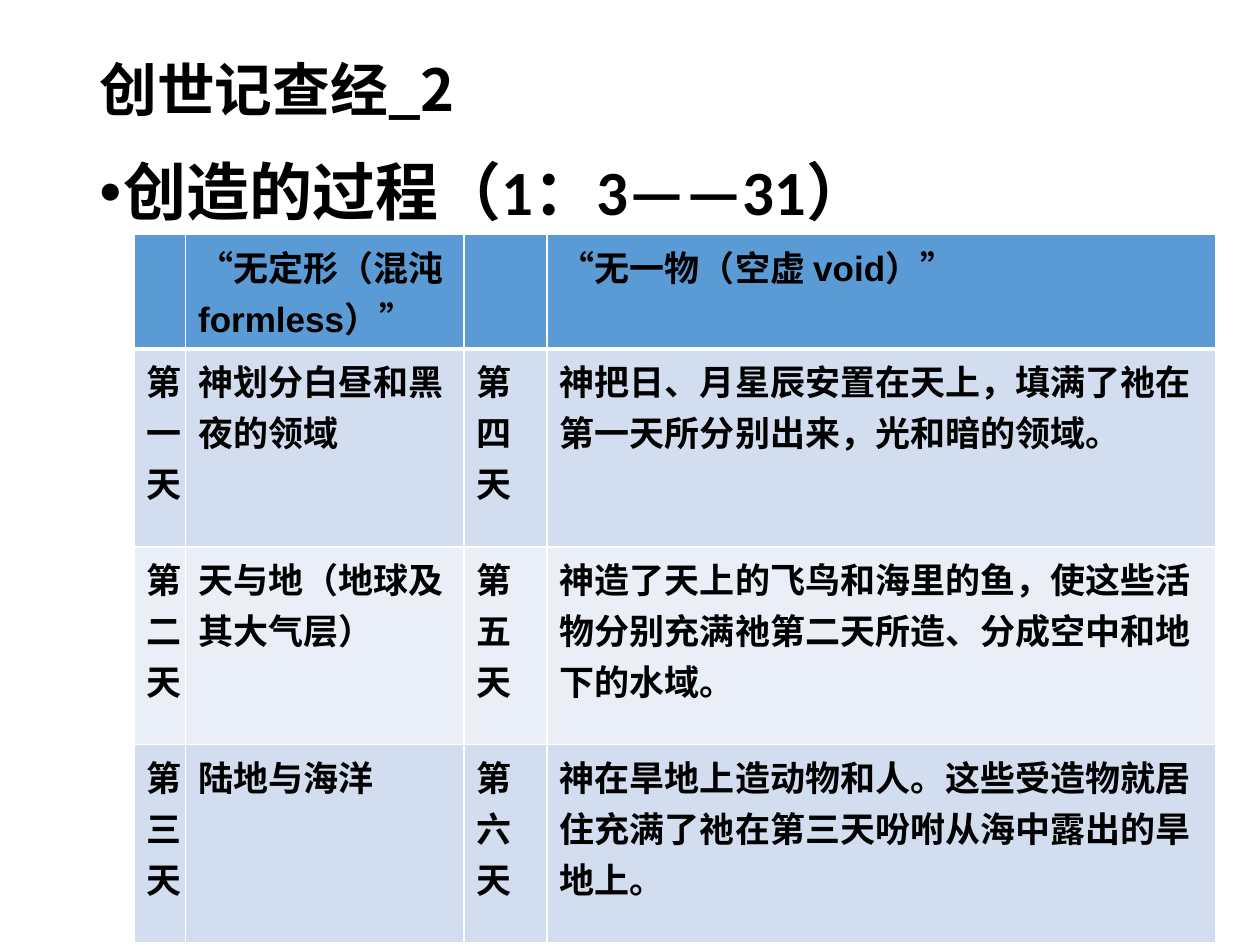
"""Build the Genesis study slide with its six-day creation table."""
from dataclasses import dataclass

from lxml import etree
from pptx import Presentation
from pptx import util as u
from pptx.dml.color import RGBColor
from pptx.enum import text as t
from pptx.oxml import ns

COLORS = {"ink": "000000", "line": "FFFFFF", "head": "5B9BD5", "odd": "D2DEEF", "even": "EAEFF7"}
CJK = "Noto Sans CJK SC"
COLUMN_WIDTHS = (1.04, 5.61, 1.68, 13.48)
HEADER_HEIGHT, DAY_HEIGHT = 1.8, 3.99


@dataclass
class DayRow:
    """A day of forming beside the day of filling that answers it."""
    form_day: str
    formed: str
    fill_day: str
    filled: str
    shade: str
    formed_font: str = "Arial"
    filled_font: str = "Calibri"
    height: float = DAY_HEIGHT

    def cells(self) -> list[tuple[str, str]]:
        """Pair each text with its font, from left to right."""
        return [(self.form_day, "Arial"), (self.formed, self.formed_font),
                (self.fill_day, "Arial"), (self.filled, self.filled_font)]


ROWS = [
    DayRow("", "“无定形（混沌formless）”", "", "“无一物（空虚 void）”", "head",
           filled_font="Arial", height=HEADER_HEIGHT),
    DayRow("第一天", "神划分白昼和黑夜的领域", "第四天",
           "神把日、月星辰安置在天上，填满了祂在第一天所分别出来，光和暗的领域。", "odd",
           formed_font="Calibri"),
    DayRow("第二天", "天与地（地球及其大气层）", "第五天",
           "神造了天上的飞鸟和海里的鱼，使这些活物分别充满祂第二天所造、分成空中和地下的水域。", "even"),
    DayRow("第三天", "陆地与海洋", "第六天",
           "神在旱地上造动物和人。这些受造物就居住充满了祂在第三天吩咐从海中露出的旱地上。", "odd"),
]


def write(frame, words: str, *, size: float, font: str, spacing: float = 1.0, before: float = 0):
    """Write one bold left-aligned paragraph and return it."""
    para = frame.paragraphs[0]
    para.alignment = t.PP_ALIGN.LEFT
    para.line_spacing = spacing
    para.space_before = u.Pt(before)
    span = para.add_run()
    span.text = words
    span.font.size = u.Pt(size)
    span.font.name = font
    span.font.bold = True
    span.font.color.rgb = RGBColor.from_string(COLORS["ink"])
    east = etree.SubElement(span.font._element, ns.qn("a:ea"))
    east.set("typeface", CJK)
    return para


def place(box, left: float, top: float, width: float, height: float, anchor) -> None:
    """Move a placeholder, in centimetres, and fix its text behaviour."""
    box.left, box.top, box.width, box.height = map(u.Cm, (left, top, width, height))
    box.text_frame.auto_size = t.MSO_AUTO_SIZE.NONE
    box.text_frame.word_wrap = True
    box.text_frame.vertical_anchor = anchor


def set_bullet(para, indent: float) -> None:
    """Give a paragraph a round bullet with a hanging indent in centimetres."""
    props = para._p.get_or_add_pPr()
    props.set("marL", str(u.Cm(indent)))
    props.set("indent", str(-u.Cm(indent)))
    face = etree.SubElement(props, ns.qn("a:buFont"))
    face.set("typeface", "Arial")
    etree.SubElement(props, ns.qn("a:buChar")).set("char", "•")


def set_borders(cell, **widths: float) -> None:
    """Draw cell borders, given as side=points in the order L, R, T, B."""
    props = cell._tc.get_or_add_tcPr()
    for index, (side, width) in enumerate(widths.items()):
        line = etree.Element(ns.qn(f"a:ln{side}"), w=str(u.Pt(width)))
        fill = etree.SubElement(line, ns.qn("a:solidFill"))
        etree.SubElement(fill, ns.qn("a:srgbClr")).set("val", COLORS["line"])
        props.insert(index, line)


def draw_table(page, rows: list[DayRow], left: float, top: float) -> None:
    """Draw the table of days at a place given in centimetres."""
    height = sum(row.height for row in rows)
    table = page.shapes.add_table(len(rows), len(COLUMN_WIDTHS), u.Cm(left), u.Cm(top),
                                  u.Cm(sum(COLUMN_WIDTHS)), u.Cm(height)).table
    for column, width in zip(table.columns, COLUMN_WIDTHS):
        column.width = u.Cm(width)
    for index, row in enumerate(rows):
        table.rows[index].height = u.Cm(row.height)
        for cell, (words, font) in zip(table.rows[index].cells, row.cells()):
            cell.fill.solid()
            cell.fill.fore_color.rgb = RGBColor.from_string(COLORS[row.shade])
            set_borders(cell, L=1, R=1, T=3 if index == 1 else 1, B=3 if index == 0 else 1)
            if words:
                write(cell.text_frame, words, size=20, font=font)


def main() -> None:
    """Build and save the deck."""
    deck = Presentation()
    deck.slide_width, deck.slide_height = u.Cm(25.4), u.Cm(19.05)
    page = deck.slides.add_slide(deck.slide_layouts[1])
    title, body = page.shapes.title, page.placeholders[1]
    place(title, 1.75, 1.02, 21.9, 1.7, t.MSO_ANCHOR.MIDDLE)
    write(title.text_frame, "创世记查经_2", size=33, font=CJK, spacing=0.9)
    place(body, 1.75, 3.12, 21.9, 14.05, t.MSO_ANCHOR.TOP)
    heading = write(body.text_frame, "创造的过程（1：3——31）", size=36, font="Calibri",
                    spacing=0.9, before=7.5)
    set_bullet(heading, 0.48)
    draw_table(page, ROWS, 2.7, 4.73)
    deck.save("out.pptx")


if __name__ == "__main__":
    main()
